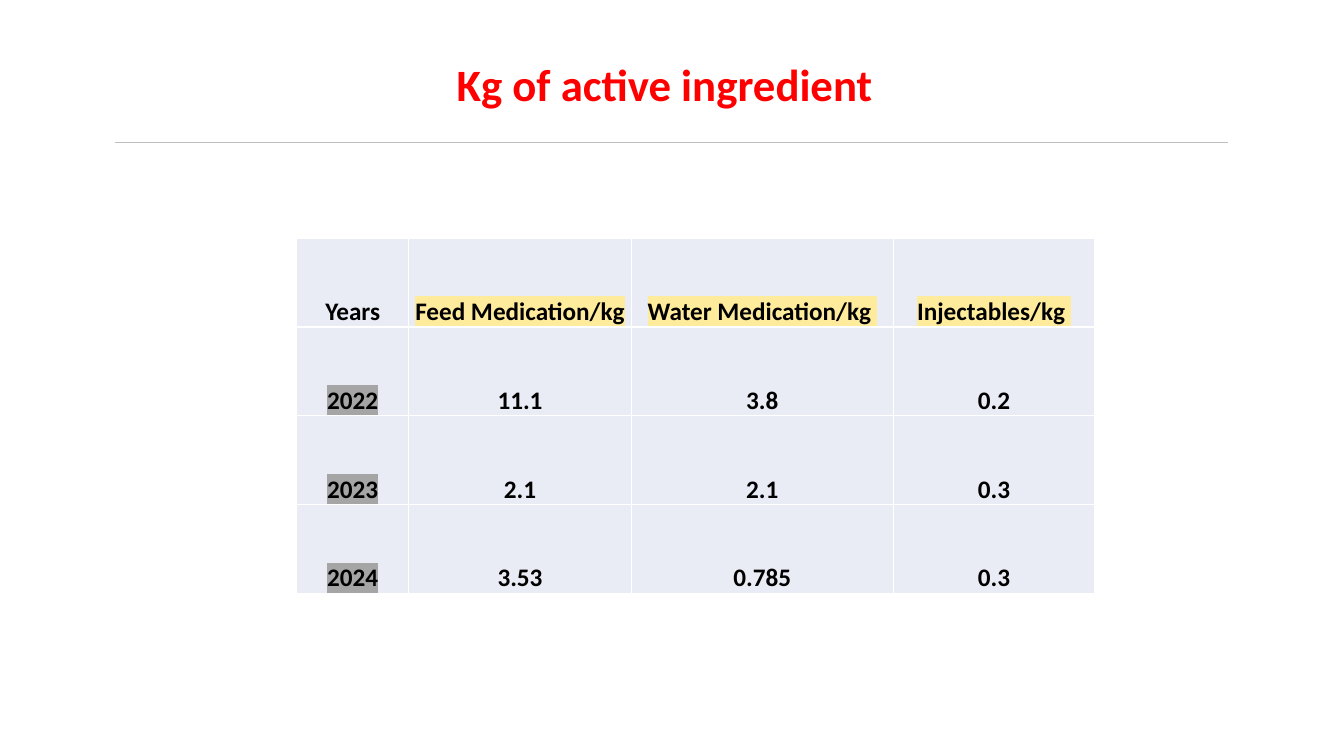
import pptx
import pptx.dml.color
import pptx.enum.shapes
import pptx.enum.text
import pptx.oxml
import pptx.oxml.ns
import pptx.util
from dataclasses import dataclass
from lxml import etree

Cm, Pt = pptx.util.Cm, pptx.util.Pt
RGB = pptx.dml.color.RGBColor.from_string
qn = pptx.oxml.ns.qn

HEADING = "Kg of active ingredient "
HEADERS = ["Years", "Feed Medication/kg", "Water Medication/kg ", "Injectables/kg "]
USAGE = [
    ["2022", "11.1", "3.8", "0.2"],
    ["2023", "2.1", "2.1", "0.3"],
    ["2024", "3.53", "0.785", "0.3"],
]
COLUMN_WIDTHS = [2.82, 5.61, 6.6, 5.08]
ROW_HEIGHT = 2.24


@dataclass(frozen=True)
class Theme:
    font: str = "Calibri"
    heading_size: int = 32
    cell_size: int = 18
    heading: str = "FF0000"
    text: str = "000000"
    rule: str = "BFBFBF"
    cell: str = "E9EBF5"
    border: str = "FFFFFF"
    header_mark: str = "FFEB9C"
    year_mark: str = "A5A5A5"


THEME = Theme()


def format_run(run, size, color):
    run.font.name = THEME.font
    run.font.size = Pt(size)
    run.font.bold = True
    run.font.color.rgb = RGB(color)


def highlight(run, color):
    """Mark the run; the schema wants the highlight right after the fill."""
    mark = etree.Element(qn("a:highlight"))
    etree.SubElement(mark, qn("a:srgbClr"), val=color)
    run.font._element.find(qn("a:solidFill")).addnext(mark)


def add_borders(cell):
    properties = cell._tc.get_or_add_tcPr()
    for position, side in enumerate(("lnL", "lnR", "lnT", "lnB")):
        border = etree.Element(qn(f"a:{side}"), w=str(Pt(1)))
        fill = etree.SubElement(border, qn("a:solidFill"))
        etree.SubElement(fill, qn("a:srgbClr"), val=THEME.border)
        properties.insert(position, border)


def mark_color(row, column):
    if row == 0 and column > 0:
        return THEME.header_mark
    if row > 0 and column == 0:
        return THEME.year_mark
    return None


def add_heading(slide):
    heading = slide.shapes.title
    heading.left, heading.top = Cm(2.87), Cm(1.45)
    heading.width, heading.height = Cm(28.02), Cm(1.96)
    frame = heading.text_frame
    frame.text = HEADING
    frame.word_wrap = True
    frame.auto_size = pptx.enum.text.MSO_AUTO_SIZE.NONE
    frame.vertical_anchor = pptx.enum.text.MSO_ANCHOR.TOP
    paragraph = frame.paragraphs[0]
    paragraph.alignment = pptx.enum.text.PP_ALIGN.CENTER
    paragraph.line_spacing = 0.9
    format_run(paragraph.runs[0], THEME.heading_size, THEME.heading)


def add_rule(slide):
    rule = slide.shapes.add_connector(
        pptx.enum.shapes.MSO_CONNECTOR.STRAIGHT, Cm(2.9), Cm(3.58), Cm(30.94), Cm(3.58))
    rule.line.color.rgb = RGB(THEME.rule)
    rule.line.width = Pt(0.5)
    etree.SubElement(rule._element.spPr, qn("a:effectLst"))


def fill_cell(cell, text, mark):
    cell.margin_left = cell.margin_right = cell.margin_top = cell.margin_bottom = 0
    cell.vertical_anchor = pptx.enum.text.MSO_ANCHOR.BOTTOM
    cell.fill.solid()
    cell.fill.fore_color.rgb = RGB(THEME.cell)
    add_borders(cell)
    cell.text_frame.text = text
    paragraph = cell.text_frame.paragraphs[0]
    paragraph.alignment = pptx.enum.text.PP_ALIGN.CENTER
    format_run(paragraph.runs[0], THEME.cell_size, THEME.text)
    if mark:
        highlight(paragraph.runs[0], mark)


def add_usage_table(slide):
    rows = [HEADERS] + USAGE
    usage = slide.shapes.add_table(
        len(rows), len(HEADERS), Cm(7.48), Cm(6),
        Cm(sum(COLUMN_WIDTHS)), Cm(ROW_HEIGHT * len(rows))).table
    for column, width in zip(usage.columns, COLUMN_WIDTHS):
        column.width = Cm(width)
    for r, texts in enumerate(rows):
        usage.rows[r].height = Cm(ROW_HEIGHT)
        for c, text in enumerate(texts):
            fill_cell(usage.cell(r, c), text, mark_color(r, c))


def main():
    deck = pptx.Presentation()
    deck.slide_width, deck.slide_height = Cm(33.87), Cm(19.05)
    slide = deck.slides.add_slide(deck.slide_layouts[5])
    add_rule(slide)
    add_heading(slide)
    add_usage_table(slide)
    deck.save("out.pptx")


if __name__ == "__main__":
    main()
